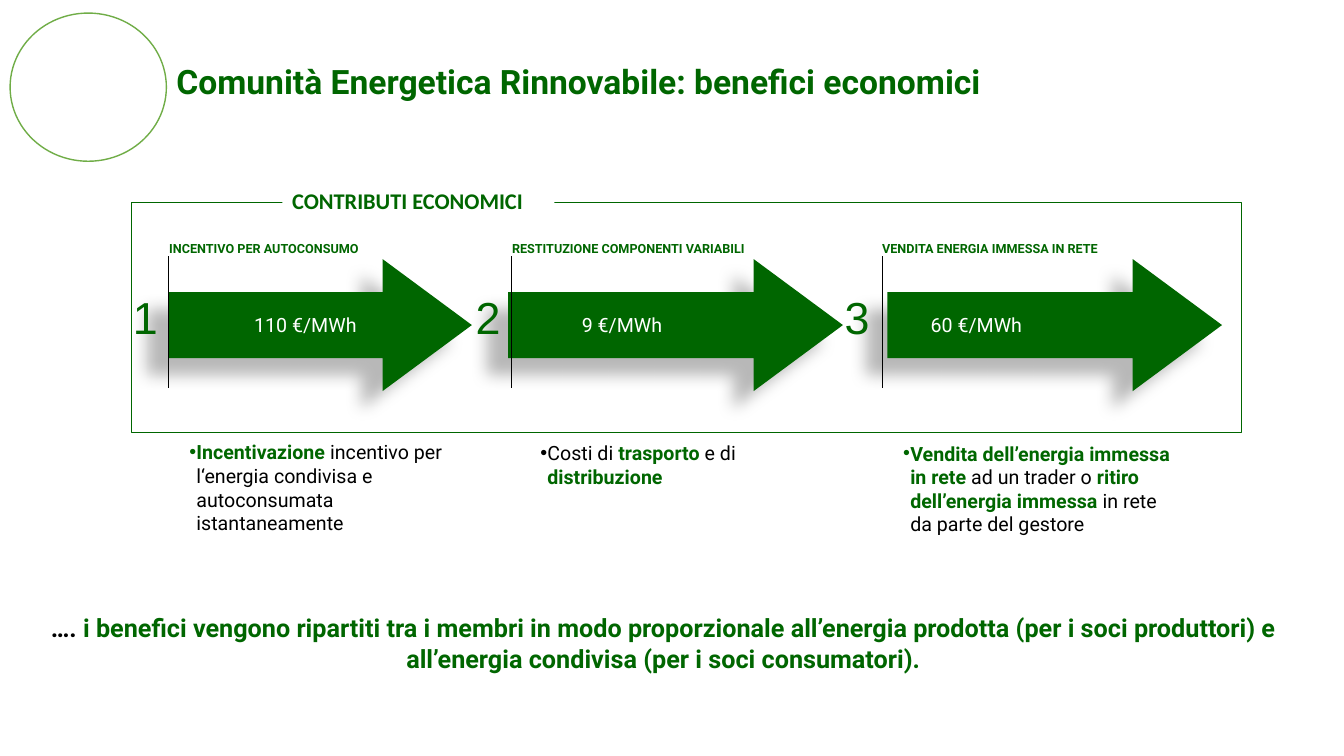
import pptx
import pptx.util
import pptx.dml.color
import pptx.enum.shapes
import pptx.enum.text
import pptx.oxml.ns
from lxml import etree

Inches = pptx.util.Inches
Pt = pptx.util.Pt
SHAPES = pptx.enum.shapes.MSO_SHAPE
ANCHOR = pptx.enum.text.MSO_ANCHOR
ALIGN = pptx.enum.text.PP_ALIGN
qn = pptx.oxml.ns.qn

COLORS = {"green": "006600", "ring": "70AD47", "black": "000000", "white": "FFFFFF"}

ARROW_TOP, ARROW_HEIGHT = 2.57, 1.31

# number, number left, bar x, heading, heading left, arrow left, arrow width,
# price, price inset, detail box, detail runs (text, highlighted)
BENEFITS = [
    ("1", 1.22, 1.67, "INCENTIVO PER AUTOCONSUMO", 1.58, 1.67, 3.01,
     "110 €/MWh", 0.85, (1.78, 4.32, 2.87, 1.04),
     [("Incentivazione ", True),
      ("incentivo per l‘energia condivisa e autoconsumata istantaneamente", False)]),
    ("2", 4.62, 5.07, "RESTITUZIONE COMPONENTI VARIABILI", 4.98, 5.04, 3.32,
     "9 €/MWh", 0.73, (5.26, 4.33, 3.09, 0.57),
     [("Costi di ", False), ("trasporto ", True), ("e di ", False), ("distribuzione", True)]),
    ("3", 8.28, 8.75, "VENDITA ENERGIA IMMESSA IN RETE", 8.65, 8.8, 3.32,
     "60 €/MWh", 0.43, (8.86, 4.33, 2.96, 1.28),
     [("Vendita dell’energia immessa in rete ", True), ("ad un trader o ", False),
      ("ritiro dell’energia immessa ", True), ("in rete da parte del gestore", False)]),
]


def rgb(name):
    return pptx.dml.color.RGBColor.from_string(COLORS[name])


def set_font(font, size, color="green", bold=False, name="Roboto"):
    font.name, font.size, font.bold = name, Pt(size), bold
    font.color.rgb = rgb(color)


def add_text(slide, box, text, size, wrap=True, **font):
    label = slide.shapes.add_textbox(*map(Inches, box))
    label.text_frame.word_wrap = wrap
    paragraph = label.text_frame.paragraphs[0]
    paragraph.text = text
    set_font(paragraph.font, size, **font)
    return label


def add_runs(slide, box, runs, size, bold=False):
    """Text whose highlighted runs are bold green and the others black."""
    label = slide.shapes.add_textbox(*map(Inches, box))
    label.text_frame.word_wrap = True
    paragraph = label.text_frame.paragraphs[0]
    for text, highlighted in runs:
        run = paragraph.add_run()
        run.text = text
        set_font(run.font, size, "green" if highlighted else "black", bold or highlighted)
    return paragraph


def add_bullet(paragraph):
    properties = paragraph._p.get_or_add_pPr()
    properties.set("marL", str(Inches(0.07)))
    properties.set("indent", str(-Inches(0.07)))
    etree.SubElement(properties, qn("a:buFont"), typeface="Arial")
    etree.SubElement(properties, qn("a:buChar"), char="•")


def add_outline(slide, kind, box, color, width, fill=None):
    outline = slide.shapes.add_shape(kind, *map(Inches, box))
    outline.shadow.inherit = False
    if fill:
        outline.fill.solid()
        outline.fill.fore_color.rgb = rgb(fill)
    else:
        outline.fill.background()
    outline.line.color.rgb = rgb(color)
    outline.line.width = Pt(width)


def add_bar(slide, x):
    bar = slide.shapes.add_connector(pptx.enum.shapes.MSO_CONNECTOR.STRAIGHT,
                                     Inches(x), Inches(2.54), Inches(x), Inches(3.85))
    bar.line.color.rgb = rgb("black")
    bar.line.width = Pt(0.75)
    etree.SubElement(bar._element.spPr, qn("a:effectLst"))


def add_arrow(slide, left, width, price, inset):
    arrow = slide.shapes.add_shape(SHAPES.RIGHT_ARROW, Inches(left), Inches(ARROW_TOP),
                                   Inches(width), Inches(ARROW_HEIGHT))
    arrow.adjustments[0], arrow.adjustments[1] = 0.5, 0.676
    arrow.fill.solid()
    arrow.fill.fore_color.rgb = rgb("green")
    arrow.line.fill.background()

    # Soft shadow falling to the lower left
    arrow.shadow.inherit = False
    effects = arrow._element.spPr.find(qn("a:effectLst"))
    shadow = etree.SubElement(effects, qn("a:outerShdw"), blurRad=str(Pt(11.8)),
                              dist=str(Pt(19.7)), dir=str(141 * 60000), rotWithShape="0")
    tint = etree.SubElement(shadow, qn("a:srgbClr"), val=COLORS["black"])
    etree.SubElement(tint, qn("a:alpha"), val="28000")

    frame = arrow.text_frame
    frame.word_wrap = True
    frame.margin_left = Inches(inset)
    frame.vertical_anchor = ANCHOR.MIDDLE
    paragraph = frame.paragraphs[0]
    paragraph.text = price
    paragraph.alignment = ALIGN.LEFT
    set_font(paragraph.font, 14, "white")


def main():
    deck = pptx.Presentation()
    deck.slide_width, deck.slide_height = Inches(13.33), Inches(7.5)
    slide = deck.slides.add_slide(deck.slide_layouts[6])

    # The three benefits
    for (number, number_left, bar_x, heading, heading_left, arrow_left, arrow_width,
         price, inset, detail_box, detail) in BENEFITS:
        add_arrow(slide, arrow_left, arrow_width, price, inset)
        add_text(slide, (heading_left, 2.34, 3.28, 0.28), heading, 9, bold=True)
        add_text(slide, (number_left, 2.82, 0.47, 0.71), number, 32, wrap=False, name="Arial")
        add_bar(slide, bar_x)
        add_bullet(add_runs(slide, detail_box, detail, 14))

    # Frame with its caption
    add_outline(slide, SHAPES.RECTANGLE, (1.3, 2.01, 11.01, 2.28), "green", 0.75)
    caption = add_text(slide, (2.8, 1.81, 2.7, 0.42), "CONTRIBUTI ECONOMICI", 16,
                       bold=True, name="Calibri")
    caption.fill.solid()
    caption.fill.fore_color.rgb = rgb("white")

    # Title and ring
    add_text(slide, (1.65, 0.56, 11.68, 0.5),
             "Comunità Energetica Rinnovabile: benefici economici", 24, bold=True)
    add_outline(slide, SHAPES.OVAL, (0.1, 0.13, 1.55, 1.47), "ring", 1, fill="white")

    # Conclusion
    conclusion = add_runs(slide, (0.06, 6.03, 13.04, 0.71), [
        ("…. ", False),
        ("i benefici vengono ripartiti tra i membri in modo proporzionale all’energia prodotta "
         "(per i soci produttori) e all’energia condivisa (per i soci consumatori).", True),
    ], 18, bold=True)
    conclusion.alignment = ALIGN.CENTER

    deck.save("out.pptx")


if __name__ == "__main__":
    main()
